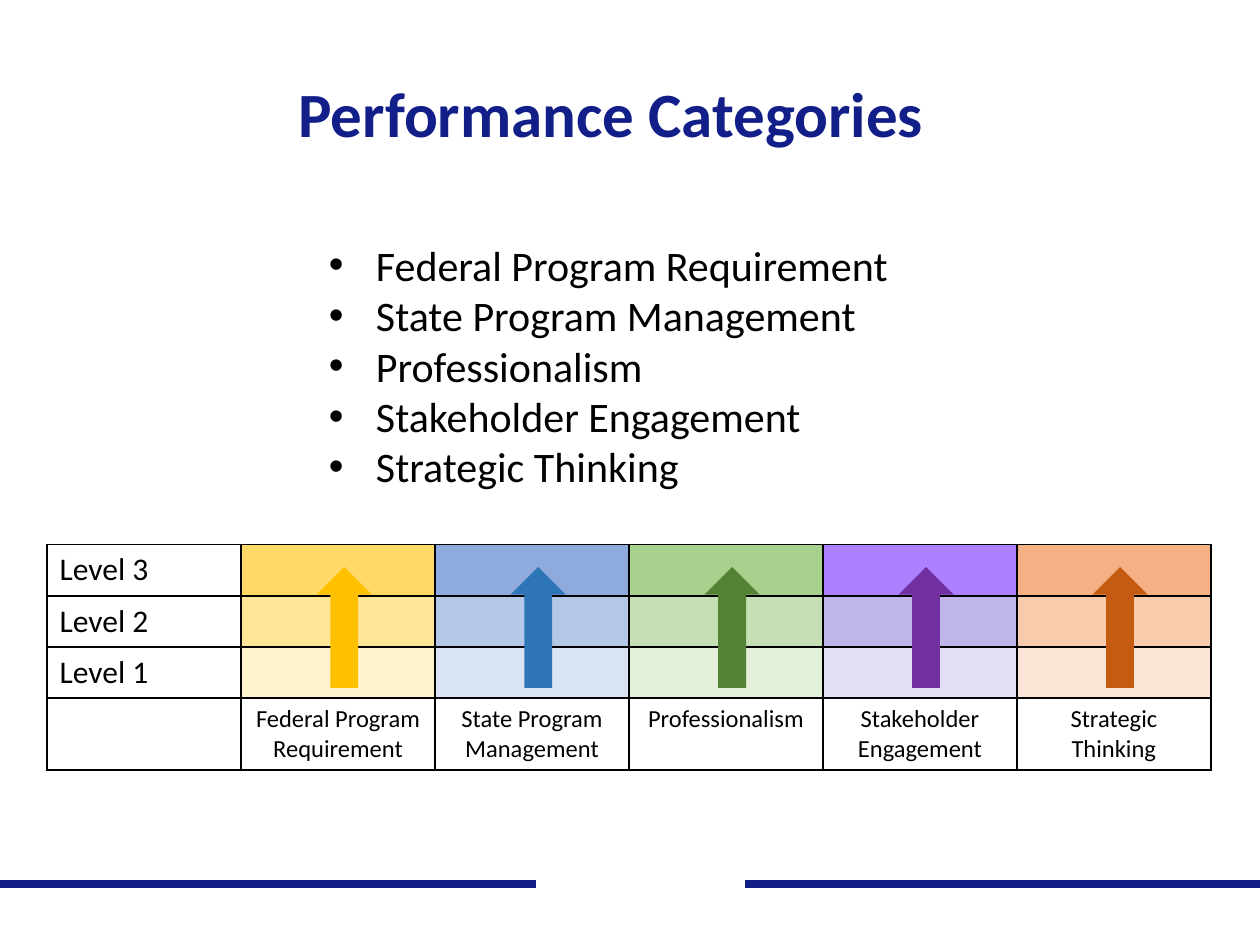
import pptx
import pptx.util
import pptx.dml.color
import pptx.enum.shapes
import pptx.enum.text
import pptx.oxml
import pptx.oxml.ns
from dataclasses import dataclass
from lxml import etree

Cm = pptx.util.Cm
Pt = pptx.util.Pt
ALIGN = pptx.enum.text.PP_ALIGN
ANCHOR = pptx.enum.text.MSO_ANCHOR


@dataclass(frozen=True)
class Theme:
    font: str = "Calibri"
    navy: str = "121F88"
    ink: str = "000000"
    paper: str = "FFFFFF"
    title: int = 36
    body: int = 24
    level: int = 18
    label: int = 14


THEME = Theme()

# Each category: name, shades from level 3 down to level 1, arrow colour
GROUPS = [
    ("Federal Program Requirement", ("FFD966", "FFE699", "FFF2CC"), "FFC000"),
    ("State Program Management", ("8FAADC", "B4C7E7", "DAE3F3"), "2E75B6"),
    ("Professionalism", ("A9D18E", "C5E0B4", "E2F0D9"), "548235"),
    ("Stakeholder Engagement", ("AB81FF", "BFB5E9", "E3DFF5"), "7030A0"),
    ("Strategic Thinking", ("F4B183", "F8CBAD", "FBE5D6"), "C55A11"),
]
LEVELS = ("Level 3", "Level 2", "Level 1")


def rgb(code):
    return pptx.dml.color.RGBColor.from_string(code)


def style(para, size, color=THEME.ink, bold=False):
    font = para.font
    font.name, font.size, font.bold = THEME.font, Pt(size), bold
    font.color.rgb = rgb(color)


def add_sub(parent, tag, **attrs):
    return etree.SubElement(parent, pptx.oxml.ns.qn(tag), **attrs)


def add_title(slide, left, top, width, height):
    title = slide.shapes.title
    title.left, title.top = Cm(left), Cm(top)
    title.width, title.height = Cm(width), Cm(height)
    frame = title.text_frame
    frame.text = "Performance Categories"
    frame.vertical_anchor = ANCHOR.MIDDLE
    para = frame.paragraphs[0]
    para.alignment, para.line_spacing = ALIGN.CENTER, 0.9
    style(para, THEME.title, THEME.navy, True)


def add_list(slide, left, top, width, height):
    box = slide.shapes.add_textbox(Cm(left), Cm(top), Cm(width), Cm(height))
    frame = box.text_frame
    frame.word_wrap = True
    frame.text = "\n".join(name for name, _, _ in GROUPS)
    for para in frame.paragraphs:
        props = para._p.get_or_add_pPr()
        props.set("marL", str(Cm(0.95)))
        props.set("indent", str(-Cm(0.95)))
        add_sub(props, "a:buFont", typeface="Arial")
        add_sub(props, "a:buChar", char="•")
        style(para, THEME.body)


def add_edges(cell):
    props = cell._tc.get_or_add_tcPr()
    for tag in ("a:lnL", "a:lnR", "a:lnT", "a:lnB"):
        edge = add_sub(props, tag, w=str(Pt(1)))
        add_sub(add_sub(edge, "a:solidFill"), "a:srgbClr", val=THEME.ink)


def fill_cell(cell, text, size, fill, align=ALIGN.LEFT):
    add_edges(cell)
    cell.fill.solid()
    cell.fill.fore_color.rgb = rgb(fill)
    cell.text = text
    para = cell.text_frame.paragraphs[0]
    para.alignment = align
    style(para, size)


def add_grid(slide, left, top, width, height):
    rows, cols = len(LEVELS) + 1, len(GROUPS) + 1
    foot = 1.45
    step, rise = width / cols, (height - foot) / len(LEVELS)
    grid = slide.shapes.add_table(
        rows, cols, Cm(left), Cm(top), Cm(width), Cm(height)).table
    grid.first_row = grid.horz_banding = False
    for col in grid.columns:
        col.width = Cm(step)
    for row in grid.rows:
        row.height = Cm(rise)
    grid.rows[rows - 1].height = Cm(foot)

    # Level names, then one shaded column per category
    for r, text in enumerate(LEVELS + ("",)):
        fill_cell(grid.cell(r, 0), text, THEME.level, THEME.paper)
    for c, (name, shades, color) in enumerate(GROUPS, 1):
        for r, shade in enumerate(shades):
            fill_cell(grid.cell(r, c), "", THEME.level, shade)
        fill_cell(grid.cell(rows - 1, c), name, THEME.label, THEME.paper,
                  ALIGN.CENTER)
        add_arrow(slide, left + c * step + 1.52, top + 0.45, color)


def add_arrow(slide, left, top, color):
    arrow = slide.shapes.add_shape(
        pptx.enum.shapes.MSO_SHAPE.UP_ARROW,
        Cm(left), Cm(top), Cm(1.12), Cm(2.44))
    arrow.shadow.inherit = False
    arrow.fill.solid()
    arrow.fill.fore_color.rgb = rgb(color)
    arrow.line.fill.background()


def add_rule(slide, start, end, top, color):
    rule = slide.shapes.add_connector(
        pptx.enum.shapes.MSO_CONNECTOR.STRAIGHT,
        Cm(start), Cm(top), Cm(end), Cm(top))
    rule.line.color.rgb = rgb(color)
    rule.line.width = Pt(4.5)
    add_sub(rule._element.spPr, "a:effectLst")


def add_footer(slide, left, top, width):
    # A full-width rule with a gap near the middle
    add_rule(slide, left, left + width, top, THEME.navy)
    add_rule(slide, left + 10.8, left + 15.01, top, THEME.paper)


def main():
    deck = pptx.Presentation()
    deck.slide_width, deck.slide_height = Cm(25.4), Cm(19.05)
    slide = deck.slides.add_slide(deck.slide_layouts[5])
    add_footer(slide, 0, 17.83, 25.4)
    add_list(slide, 6.38, 4.7, 12.47, 6.25)
    add_grid(slide, 0.95, 10.98, 23.46, 4.54)
    add_title(slide, 1.52, 0.97, 21.59, 2.77)
    deck.save("out.pptx")


if __name__ == "__main__":
    main()
